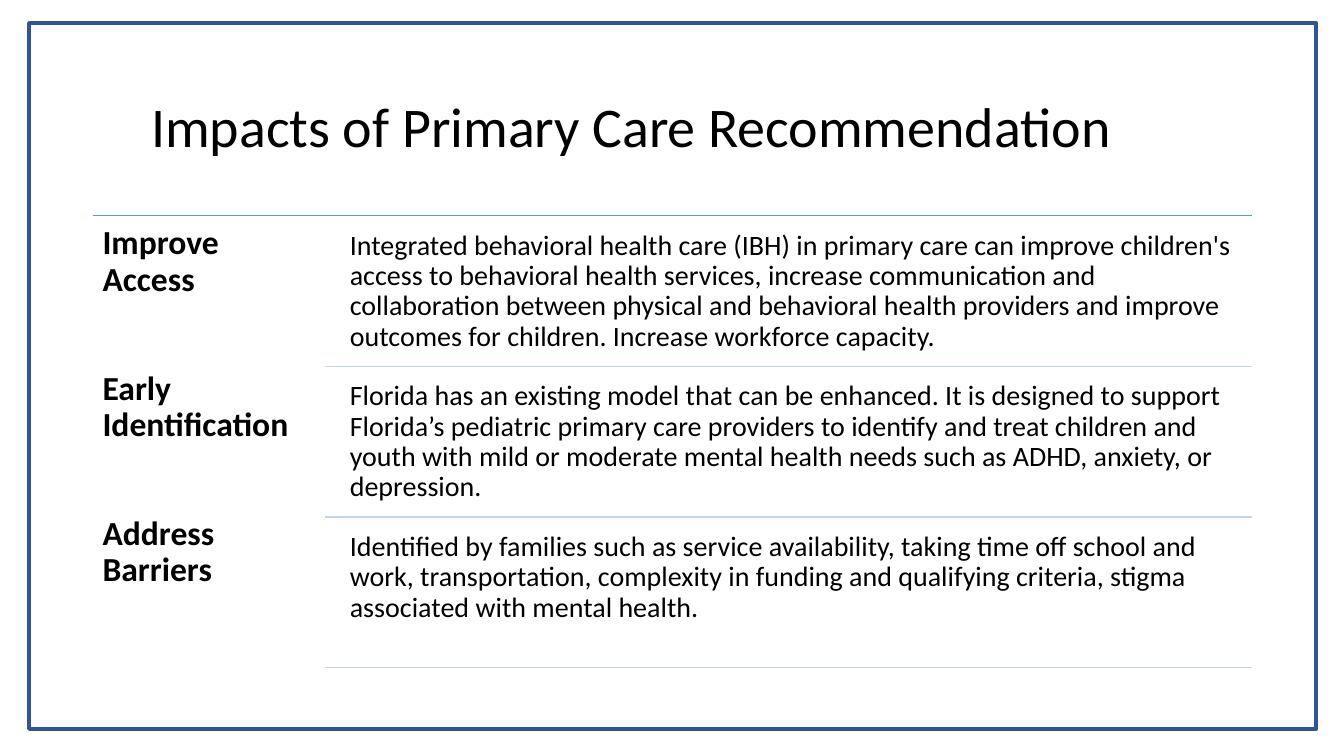
from dataclasses import dataclass

from lxml import etree
from pptx import Presentation
from pptx.dml.color import RGBColor
from pptx.enum import shapes, text
from pptx.oxml.ns import qn
from pptx.util import Pt

# Content
TITLE = "Impacts of Primary Care Recommendation"
IMPACTS = [
    ("Improve Access",
     "Integrated behavioral health care (IBH) in primary care can improve children's "
     "access to behavioral health services, increase communication and collaboration "
     "between physical and behavioral health providers and improve outcomes for "
     "children. Increase workforce capacity."),
    ("Early Identification",
     "Florida has an existing model that can be enhanced. It is designed to support "
     "Florida’s pediatric primary care providers to identify and treat children and "
     "youth with mild or moderate mental health needs such as ADHD, anxiety, or "
     "depression."),
    ("Address Barriers",
     "Identified by families such as service availability, taking time off school and "
     "work, transportation, complexity in funding and qualifying criteria, stigma "
     "associated with mental health."),
]


@dataclass(frozen=True)
class Theme:
    font: str = "Calibri"
    ink: str = "000000"
    frame: str = "2F5597"
    top_rule: str = "5B9BD5"
    row_rule: str = "C4D5EB"
    title_size: float = 40
    label_size: float = 24
    body_size: float = 20


THEME = Theme()

# Layout, in points
LEFT, RIGHT, TOP = 66.2, 894.2, 154.1
ROW_PITCH = 107.6
LABEL_WIDTH, LABEL_GAP = 165.6, 52
BODY_LEFT, BODY_DROP, BODY_HEIGHT = 244.1, 5.2, 102.4


def add_run(paragraph, words, size, bold=False):
    run = paragraph.add_run()
    run.text = words
    run.font.name = THEME.font
    run.font.size = Pt(size)
    run.font.bold = bold
    run.font.color.rgb = RGBColor.from_string(THEME.ink)


def format_frame(frame, inset):
    frame.word_wrap = True
    frame.auto_size = text.MSO_AUTO_SIZE.NONE
    frame.vertical_anchor = text.MSO_ANCHOR.TOP
    frame.margin_left = frame.margin_right = Pt(inset)
    frame.margin_top = frame.margin_bottom = Pt(inset)


def add_text(slide, box, inset, paragraphs, size, bold=False, gap=0):
    frame = slide.shapes.add_textbox(*map(Pt, box)).text_frame
    format_frame(frame, inset)
    for index, words in enumerate(paragraphs):
        paragraph = frame.add_paragraph() if index else frame.paragraphs[0]
        paragraph.line_spacing = 0.9
        paragraph.space_after = Pt(gap)
        add_run(paragraph, words, size, bold)


def add_rule(slide, left, top, color):
    rule = slide.shapes.add_connector(
        shapes.MSO_CONNECTOR.STRAIGHT, Pt(left), Pt(top), Pt(RIGHT), Pt(top))
    rule.line.color.rgb = RGBColor.from_string(color)
    rule.line.width = Pt(1)
    etree.SubElement(rule._element.spPr, qn("a:effectLst"))


def main():
    presentation = Presentation()
    presentation.slide_width, presentation.slide_height = Pt(960), Pt(540)
    slide = presentation.slides.add_slide(presentation.slide_layouts[5])

    # Title
    title = slide.shapes.title
    title.left, title.top, title.width, title.height = map(Pt, (100.8, 58.3, 737.3, 56.9))
    format_frame(title.text_frame, 3.6)
    title.text_frame.margin_left = title.text_frame.margin_right = Pt(7.2)
    heading = title.text_frame.paragraphs[0]
    heading.alignment = text.PP_ALIGN.LEFT
    heading.line_spacing = 1.07
    add_run(heading, TITLE, THEME.title_size)

    # Slide frame
    border = slide.shapes.add_shape(
        shapes.MSO_SHAPE.RECTANGLE, Pt(20.9), Pt(16.6), Pt(919.4), Pt(504))
    border.shadow.inherit = False
    border.fill.background()
    border.line.color.rgb = RGBColor.from_string(THEME.frame)
    border.line.width = Pt(3)

    # Label column
    add_rule(slide, LEFT, TOP, THEME.top_rule)
    add_text(slide, (LEFT, TOP, LABEL_WIDTH, 328.3), 7.2,
             [label for label, _ in IMPACTS], THEME.label_size, True, LABEL_GAP)

    # Description rows, each closed by a rule
    for index, (_, description) in enumerate(IMPACTS):
        row_top = TOP + index * ROW_PITCH
        add_text(slide, (BODY_LEFT, row_top + BODY_DROP, RIGHT - BODY_LEFT, BODY_HEIGHT),
                 5.8, [description], THEME.body_size)
        add_rule(slide, LEFT + LABEL_WIDTH, row_top + ROW_PITCH, THEME.row_rule)

    presentation.save("out.pptx")


if __name__ == "__main__":
    main()
